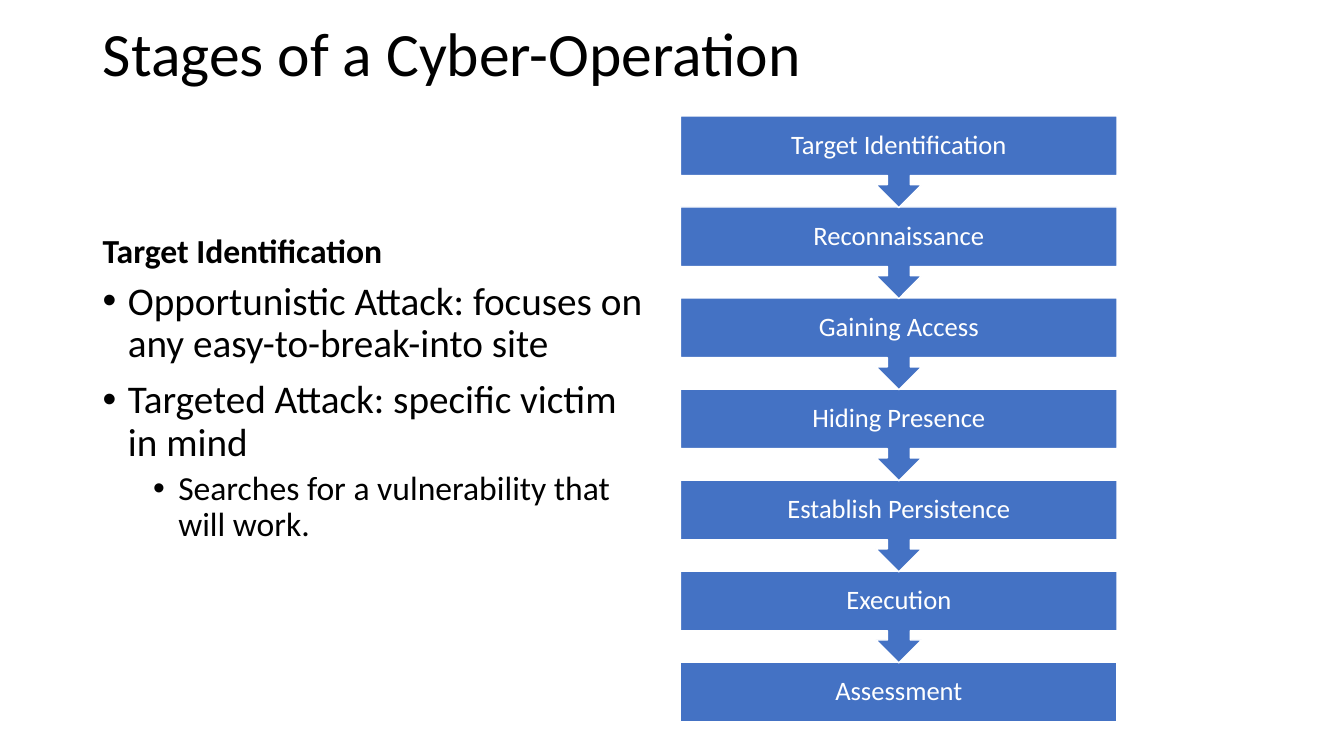
from dataclasses import dataclass

from lxml.etree import SubElement
from pptx import Presentation
from pptx.dml.color import RGBColor
from pptx.enum.shapes import MSO_SHAPE as Preset
from pptx.enum.text import MSO_ANCHOR as Anchor, MSO_AUTO_SIZE as AutoSize, PP_ALIGN as Align
from pptx.oxml.ns import qn
from pptx.util import Inches, Pt


@dataclass(frozen=True)
class Theme:
    font: str = "Calibri"
    ink: RGBColor = RGBColor(0x00, 0x00, 0x00)
    paper: RGBColor = RGBColor(0xFF, 0xFF, 0xFF)
    accent: RGBColor = RGBColor(0x44, 0x72, 0xC4)
    title: int = 44
    body: int = 28
    detail: int = 24
    stage: int = 19


theme = Theme()


def write(paragraph, text, size, color=theme.ink, bold=False, align=Align.LEFT,
          before=0, level=0, indent=None):
    paragraph.text = text
    paragraph.level = level
    paragraph.alignment = align
    paragraph.line_spacing = 0.9
    paragraph.space_before = Pt(before)
    if indent is not None:
        properties = paragraph._p.get_or_add_pPr()
        properties.set("marL", str(Inches(indent)))
        properties.set("indent", str(Inches(-0.25)))
        SubElement(properties, qn("a:buFont")).set("typeface", "Arial")
        SubElement(properties, qn("a:buChar")).set("char", "•")
    font = paragraph.font
    font.name = theme.font
    font.size = Pt(size)
    font.bold = bold
    font.color.rgb = color


def set_frame(shape, anchor, margin=None):
    frame = shape.text_frame
    frame.word_wrap = True
    frame.auto_size = AutoSize.NONE
    frame.vertical_anchor = anchor
    if margin is not None:
        frame.margin_left = frame.margin_right = Inches(margin)
        frame.margin_top = frame.margin_bottom = Inches(margin)
    return frame


presentation = Presentation()
presentation.slide_width = Inches(13.33)
presentation.slide_height = Inches(7.5)
slide = presentation.slides.add_slide(presentation.slide_layouts.get_by_name("Title Only"))

title = slide.shapes.title
title.left, title.top = Inches(0.92), Inches(0.11)
title.width, title.height = Inches(11.5), Inches(0.9)
write(set_frame(title, Anchor.MIDDLE).paragraphs[0], "Stages of a Cyber-Operation", theme.title)

heading = slide.shapes.add_textbox(Inches(0.92), Inches(1.84), Inches(5.64), Inches(0.9))
write(set_frame(heading, Anchor.BOTTOM).paragraphs[0], "Target Identification",
      theme.detail, bold=True)

body = slide.shapes.add_textbox(Inches(0.92), Inches(2.74), Inches(5.64), Inches(4.03))
body_frame = set_frame(body, Anchor.TOP)
write(body_frame.paragraphs[0], "Opportunistic Attack: focuses on any easy-to-break-into site",
      theme.body, indent=0.25)
write(body_frame.add_paragraph(), "Targeted Attack: specific victim in mind",
      theme.body, before=10, indent=0.25)
write(body_frame.add_paragraph(), "Searches for a vulnerability that will work.",
      theme.detail, before=5, level=1, indent=0.75)

stages = ["Target Identification", "Reconnaissance", "Gaining Access", "Hiding Presence",
          "Establish Persistence", "Execution", "Assessment"]
first_top, last_top = 1.15, 6.57
pitch = (last_top - first_top) / (len(stages) - 1)

for index, stage in reversed(list(enumerate(stages))):
    is_last = index == len(stages) - 1
    preset = Preset.RECTANGLE if is_last else Preset.DOWN_ARROW_CALLOUT
    height = 0.59 if is_last else 0.91
    shape = slide.shapes.add_shape(preset, Inches(6.75), Inches(first_top + index * pitch),
                                   Inches(4.33), Inches(height))
    shape.shadow.inherit = False
    shape.fill.solid()
    shape.fill.fore_color.rgb = theme.accent
    shape.line.color.rgb = theme.paper
    shape.line.width = Pt(1)
    write(set_frame(shape, Anchor.MIDDLE, margin=0.15).paragraphs[0], stage, theme.stage,
          color=theme.paper, align=Align.CENTER)

presentation.save("out.pptx")
